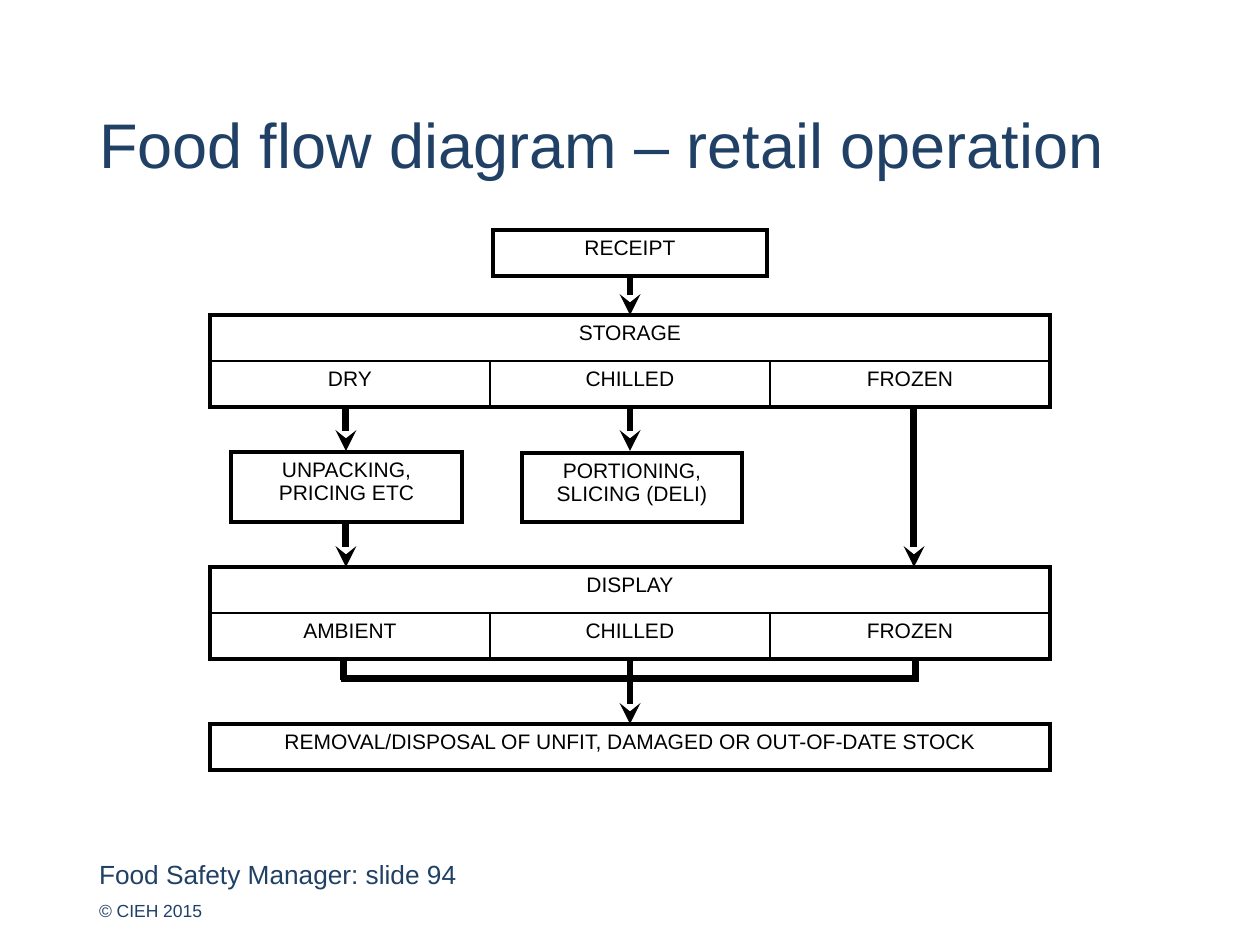
from dataclasses import dataclass

from pptx import Presentation
from pptx.dml.color import RGBColor
from pptx.enum.shapes import MSO_CONNECTOR
from pptx.enum.text import MSO_ANCHOR, MSO_AUTO_SIZE, PP_ALIGN
from pptx.oxml.ns import qn
from pptx.util import Inches, Pt
from lxml import etree

LINE = MSO_CONNECTOR.STRAIGHT
MIDDLE = MSO_ANCHOR.MIDDLE
TOP = MSO_ANCHOR.TOP
LEFT = PP_ALIGN.LEFT
CENTER = PP_ALIGN.CENTER
FIXED = MSO_AUTO_SIZE.NONE


@dataclass(frozen=True)
class Theme:
    """Colours, type sizes and line widths."""
    font: str = "Arial"
    navy: str = "204066"
    ink: str = "000000"
    paper: str = "FFFFFF"
    title: int = 36
    foot: int = 15
    small: int = 10
    cell: int = 12
    thick: float = 2.25
    thin: float = 1
    flow: float = 4


def px(n):
    """Turn pixels into EMU."""
    return round(n * Inches(1) / 126)


class Deck:
    """Draws styled elements on the current slide."""

    def __init__(self, theme):
        """Start a presentation with one title slide."""
        self.theme = theme
        self.file = Presentation()
        self.file.slide_width, self.file.slide_height = px(1260), px(945)
        self.slide = self.file.slides.add_slide(self.file.slide_layouts[5])

    def add_text(self, frame, text, size, color, align):
        """Add one styled run to the first paragraph."""
        para = frame.paragraphs[0]
        para.alignment = align
        run = para.add_run()
        run.text = text
        run.font.name = self.theme.font
        run.font.size = Pt(size)
        run.font.color.rgb = RGBColor.from_string(color)

    def setup(self, frame, anchor):
        """Clear the margins and fix the size of a frame."""
        frame.margin_left = frame.margin_right = 0
        frame.margin_top = frame.margin_bottom = 0
        frame.auto_size = FIXED
        frame.word_wrap = True
        frame.vertical_anchor = anchor

    def title(self, text, x, y, w, h):
        """Fill and place the title."""
        shape = self.slide.shapes.title
        shape.left, shape.top, shape.width, shape.height = map(px, (x, y, w, h))
        self.setup(shape.text_frame, MIDDLE)
        self.add_text(shape.text_frame, text, self.theme.title, self.theme.navy, LEFT)

    def label(self, text, x, y, w, h, size):
        """Add a plain text box."""
        box = self.slide.shapes.add_textbox(*map(px, (x, y, w, h)))
        self.setup(box.text_frame, TOP)
        self.add_text(box.text_frame, text, size, self.theme.navy, LEFT)

    def edge(self, cell, side, width):
        """Draw one border of a cell."""
        props = cell._tc.get_or_add_tcPr()
        line = etree.SubElement(props, qn(f"a:ln{side}"), w=str(Pt(width)))
        fill = etree.SubElement(line, qn("a:solidFill"))
        etree.SubElement(fill, qn("a:srgbClr"), val=self.theme.ink)

    def grid(self, rows, x, y, w, h):
        """Add a table whose single-item rows span its width."""
        high, wide = len(rows), max(map(len, rows))
        frame = self.slide.shapes.add_table(high, wide, *map(px, (x, y, w, h)))
        table = frame.table
        table.first_row = table.horz_banding = False
        for r, row in enumerate(rows):
            span = len(row) < wide
            if span:
                table.cell(r, 0).merge(table.cell(r, wide - 1))
            for c in range(wide):
                cell = table.cell(r, c)
                outer = {"L": span or c == 0, "R": span or c == wide - 1,
                         "T": r == 0, "B": r == high - 1}
                for side, bold in outer.items():
                    self.edge(cell, side, self.theme.thick if bold else self.theme.thin)
                cell.fill.solid()
                cell.fill.fore_color.rgb = RGBColor.from_string(self.theme.paper)
            for c, text in enumerate(row):
                self.add_text(table.cell(r, c).text_frame, text,
                              self.theme.cell, self.theme.ink, CENTER)

    def line(self, x1, y1, x2, y2, arrow=False):
        """Add a flow line, with an arrowhead if asked."""
        link = self.slide.shapes.add_connector(LINE, *map(px, (x1, y1, x2, y2)))
        link.line.width = Pt(self.theme.flow)
        link.line.color.rgb = RGBColor.from_string(self.theme.ink)
        if arrow:
            etree.SubElement(link.line._get_or_add_ln(), qn("a:tailEnd"), type="stealth")
        etree.SubElement(link._element.spPr, qn("a:effectLst"))


def main():
    """Build the food flow slide."""
    theme = Theme()
    deck = Deck(theme)
    deck.label("Food Safety Manager: slide 94", 99, 858, 412, 32, theme.foot)
    deck.label("© CIEH 2015", 99, 900, 134, 30, theme.small)
    deck.title("Food flow diagram – retail operation", 99, 99, 1134, 88)

    deck.grid([["STORAGE"], ["DRY", "CHILLED", "FROZEN"]], 210, 315, 840, 92)
    deck.grid([["DISPLAY"], ["AMBIENT", "CHILLED", "FROZEN"]], 210, 567, 840, 92)
    deck.grid([["REMOVAL/DISPOSAL OF UNFIT, DAMAGED OR OUT-OF-DATE STOCK"]],
              210, 724, 840, 46)
    deck.grid([["RECEIPT"]], 493, 230, 274, 46)
    deck.grid([["UNPACKING, PRICING ETC"]], 231, 452, 231, 70)
    deck.grid([["PORTIONING, SLICING (DELI)"]], 522, 453, 220, 69)

    dry, mid, ice = 346, 630, 914
    flows = [(mid, 276, 315), (dry, 408, 451), (mid, 407, 451),
             (ice, 407, 567), (dry, 523, 567), (mid, 659, 724)]
    for x, start, end in flows:
        deck.line(x, start, x, end, arrow=True)
    for x in (344, 916):
        deck.line(x, 659, x, 680)
    deck.line(341, 679, 919, 679)
    deck.file.save("out.pptx")


if __name__ == "__main__":
    main()
